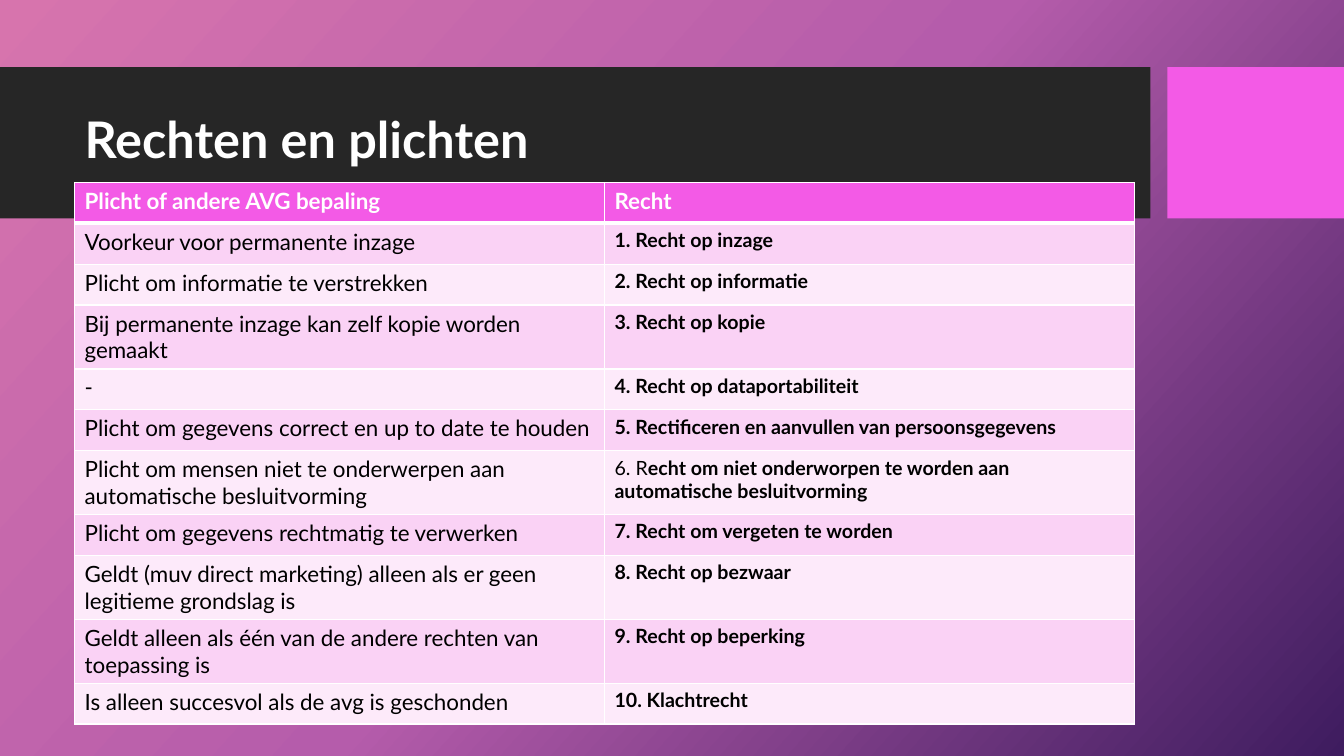
from copy import deepcopy

from lxml.etree import SubElement
from pptx import Presentation
from pptx.dml.color import RGBColor
from pptx.enum.shapes import MSO_SHAPE
from pptx.enum.text import MSO_ANCHOR
from pptx.oxml.ns import qn
from pptx.util import Pt

WHITE = RGBColor(0xFF, 0xFF, 0xFF)
BLACK = RGBColor(0x00, 0x00, 0x00)
CHARCOAL = RGBColor(0x26, 0x26, 0x26)
PINK = RGBColor(0xF3, 0x5A, 0xE6)
BAND_DARK = RGBColor(0xFA, 0xD2, 0xF5)
BAND_LIGHT = RGBColor(0xFD, 0xEA, 0xFA)
GRADIENT = [
    (0, RGBColor(0xD7, 0x74, 0xAD)),
    (0.5, RGBColor(0xB5, 0x5C, 0xAB)),
    (1, RGBColor(0x3E, 0x1C, 0x5F)),
]

FONT = "Lato"
LEFT, WIDTH = 53.3, 757
ROW_HEIGHT = 29.2
HEADERS = ["Plicht of andere AVG bepaling", "Recht"]
DUTIES_AND_RIGHTS = [
    ("Voorkeur voor permanente inzage", "1. Recht op inzage"),
    ("Plicht om informatie te verstrekken", "2. Recht op informatie"),
    ("Bij permanente inzage kan zelf kopie worden gemaakt", "3. Recht op kopie"),
    ("-", "4. Recht op dataportabiliteit"),
    ("Plicht om gegevens correct en up to date te houden",
     "5. Rectificeren en aanvullen van persoonsgegevens"),
    ("Plicht om mensen niet te onderwerpen aan automatische besluitvorming",
     "echt om niet onderworpen te worden aan automatische besluitvorming"),
    ("Plicht om gegevens rechtmatig te verwerken", "7. Recht om vergeten te worden"),
    ("Geldt (muv direct marketing) alleen als er geen legitieme grondslag is",
     "8. Recht op bezwaar"),
    ("Geldt alleen als één van de andere rechten van toepassing is",
     "9. Recht op beperking"),
    ("Is alleen succesvol als de avg is geschonden", "10. Klachtrecht"),
]
PLAIN_STARTS = {6: "6. R"}  # unbolded opening of a right, by row


def paint_background(page):
    fill = page.background.fill
    fill.gradient()
    fill.gradient_angle = 360 - 42
    stop_list = page.background._cSld.find(".//" + qn("a:gsLst"))
    stop_list.append(deepcopy(stop_list[0]))
    for stop, (position, color) in zip(fill.gradient_stops, GRADIENT):
        stop.position = position
        stop.color.rgb = color


def add_band(page, left, width, color):
    band = page.shapes.add_shape(
        MSO_SHAPE.RECTANGLE, Pt(left), Pt(48), Pt(width), Pt(108))
    band.shadow.inherit = False
    band.fill.solid()
    band.fill.fore_color.rgb = color
    band.line.fill.background()


def add_text(paragraph, text, size=16, color=BLACK, bold=False):
    span = paragraph.add_run()
    span.text = text
    span.font.name = FONT
    span.font.size = Pt(size)
    span.font.color.rgb = color
    span.font.bold = bold


def add_title(page, text):
    box = page.shapes.add_textbox(Pt(LEFT), Pt(59), Pt(WIDTH), Pt(85))
    frame = box.text_frame
    frame.word_wrap = True
    frame.vertical_anchor = MSO_ANCHOR.MIDDLE
    paragraph = frame.paragraphs[0]
    paragraph.line_spacing = 0.9
    add_text(paragraph, text, size=36, color=WHITE, bold=True)


def style_cell(cell, color, top=1, bottom=1):
    """Give a cell white borders, widths in points, and a solid fill."""
    properties = cell._tc.get_or_add_tcPr()
    for side, width in (("L", 1), ("R", 1), ("T", top), ("B", bottom)):
        border = SubElement(properties, qn(f"a:ln{side}"), w=str(Pt(width)))
        solid = SubElement(border, qn("a:solidFill"))
        SubElement(solid, qn("a:srgbClr"), val=str(WHITE))
    cell.fill.solid()
    cell.fill.fore_color.rgb = color


def add_rights_table(page):
    row_count = len(DUTIES_AND_RIGHTS) + 1
    table = page.shapes.add_table(
        row_count, 2, Pt(LEFT), Pt(130.3), Pt(WIDTH), Pt(ROW_HEIGHT * row_count)).table
    for row in table.rows:
        row.height = Pt(ROW_HEIGHT)
    for column, header in enumerate(HEADERS):
        cell = table.cell(0, column)
        style_cell(cell, PINK, bottom=3)
        add_text(cell.text_frame.paragraphs[0], header, color=WHITE, bold=True)
    for number, (duty, right) in enumerate(DUTIES_AND_RIGHTS, start=1):
        duty_cell, right_cell = table.cell(number, 0), table.cell(number, 1)
        for cell in (duty_cell, right_cell):
            style_cell(cell, BAND_DARK if number % 2 else BAND_LIGHT,
                       top=3 if number == 1 else 1)
        add_text(duty_cell.text_frame.paragraphs[0], duty)
        paragraph = right_cell.text_frame.paragraphs[0]
        if number in PLAIN_STARTS:
            add_text(paragraph, PLAIN_STARTS[number], size=14)
        add_text(paragraph, right, size=14, bold=True)


def main():
    deck = Presentation()
    deck.slide_width, deck.slide_height = Pt(960), Pt(540)
    page = deck.slides.add_slide(deck.slide_layouts[6])
    paint_background(page)
    add_band(page, 0, 821.7, CHARCOAL)
    add_band(page, 833.8, 126.2, PINK)
    add_title(page, "Rechten en plichten")
    add_rights_table(page)
    deck.save("out.pptx")


if __name__ == "__main__":
    main()
